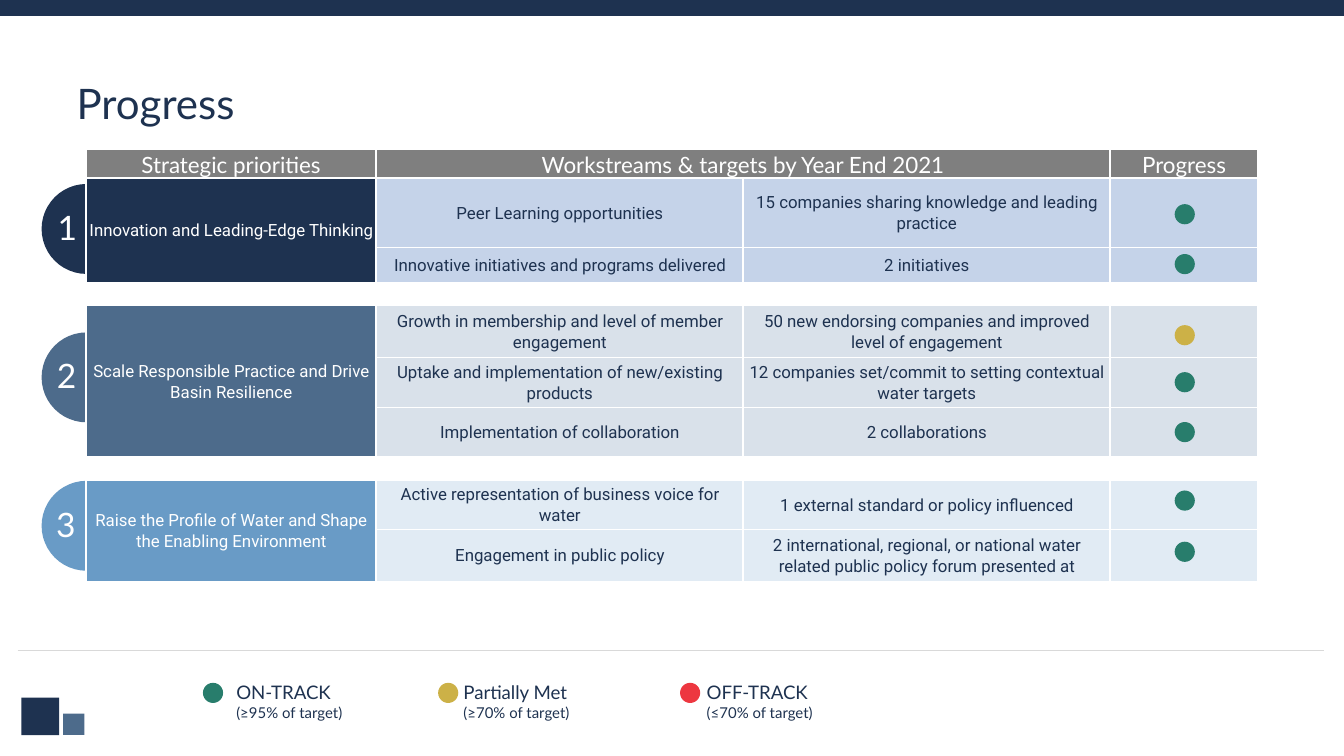
from dataclasses import dataclass

from lxml import etree
from pptx import Presentation
from pptx.dml.color import RGBColor
from pptx.enum import shapes, text
from pptx.oxml import ns
from pptx.util import Pt

NAVY, STEEL, SKY, WHITE, GRAY = "1E3250", "4D6B8B", "699BC6", "FFFFFF", "7F7F7F"
GREEN, GOLD, RED = "287D6C", "CCB147", "ED3740"
DOT = 10.8
TABLE_LEFT, TABLE_TOP = 46.1, 79.9
COLUMNS = [155.5, 196.6, 196.6, 79.2]
HEADER_HEIGHT, GAP_HEIGHT = 15.4, 12.3
BADGE_TOP, BADGE_STEP = 98.6, 79.5


@dataclass
class Target:
    workstream: str
    goal: str
    height: float
    dot_top: float
    status: str = GREEN


@dataclass
class Priority:
    name: str
    color: str
    tint: str
    targets: list[Target]


@dataclass
class Legend:
    label: str
    rule: str
    color: str
    dot_left: float
    text_left: float
    width: float


PRIORITIES = [
    Priority("Innovation and Leading-Edge Thinking", NAVY, "C5D3E9", [
        Target("Peer Learning opportunities",
               "15 companies sharing knowledge and leading practice", 37.4, 109.4),
        Target("Innovative initiatives and programs delivered", "2 initiatives", 18.7, 136.1),
    ]),
    Priority("Scale Responsible Practice and Drive Basin Resilience", STEEL, "D9E1EA", [
        Target("Growth in membership and level of member engagement",
               "50 new endorsing companies and improved level of engagement", 28, 174.2, GOLD),
        Target("Uptake and implementation of new/existing products",
               "12 companies set/commit to setting contextual water targets", 26.6, 199.4),
        Target("Implementation of collaboration", "2 collaborations", 26.6, 226.1),
    ]),
    Priority("Raise the Profile of Water and Shape the Enabling Environment", SKY, "E1EBF4", [
        Target("Active representation of business voice for water",
               "1 external standard or policy influenced", 26.6, 262.8),
        Target("Engagement in public policy",
               "2 international, regional, or national water related public policy forum presented at",
               28, 290.2),
    ]),
]

LEGENDS = [
    Legend("OFF-TRACK", "(≤70% of target)", RED, 364.3, 371.5, 85),
    Legend("Partially Met", "(≥70% of target)", GOLD, 234.7, 241.2, 91.4),
    Legend("ON-TRACK", "(≥95% of target)", GREEN, 108.7, 119.5, 84.2),
]


def rgb(value: str) -> RGBColor:
    return RGBColor.from_string(value)


def write(p, words: str, size: float, color: str, name: str = "Lato") -> None:
    r = p.add_run()
    r.text = words
    for key, value in {"size": Pt(size), "name": name}.items():
        setattr(r.font, key, value)
    r.font.color.rgb = rgb(color)


def add_filled(container, kind, box: tuple, color: str) -> None:
    sp = container.shapes.add_shape(kind, *map(Pt, box))
    sp.shadow.inherit = False
    sp.fill.solid()
    sp.fill.fore_color.rgb = rgb(color)
    sp.line.fill.background()


def add_dot(container, left: float, top: float, color: str) -> None:
    add_filled(container, shapes.MSO_SHAPE.FLOWCHART_CONNECTOR, (left, top, DOT, DOT), color)


def add_text(container, box: tuple, lines: list[tuple], wrap: bool = True) -> None:
    """Write one paragraph for each (words, size, color) line."""
    tf = container.shapes.add_textbox(*map(Pt, box)).text_frame
    tf.word_wrap = wrap
    for i, line in enumerate(lines):
        write(tf.add_paragraph() if i else tf.paragraphs[0], *line)


def add_badge(s, index: int, color: str) -> None:
    top = BADGE_TOP + index * BADGE_STEP
    g = s.shapes.add_group_shape()
    add_filled(g, shapes.MSO_SHAPE.OVAL, (22.3, top, 48.2, 48.2), color)
    left, width = 23.8 - 0.4 * index, 24.5 + 0.7 * index
    add_text(g, (left, top + 8.6, width, 28.8), [(str(index + 1), 18, WHITE)], wrap=False)


def add_legend(s, item: Legend) -> None:
    g = s.shapes.add_group_shape()
    add_text(g, (item.text_left, 361.4, item.width, 28.8),
             [(item.label, 10, NAVY), (item.rule, 8, NAVY)])
    add_dot(g, item.dot_left, 365.8, item.color)


def format_cell(cell, fill: str, sides: str = "LRTB") -> None:
    """Set white borders, fill and narrow margins, and keep an empty cell low."""
    tc_pr = cell._tc.get_or_add_tcPr()
    for side in sides:
        ln = etree.SubElement(tc_pr, ns.qn(f"a:ln{side}"), w=str(Pt(1)))
        solid = etree.SubElement(ln, ns.qn("a:solidFill"))
        etree.SubElement(solid, ns.qn("a:srgbClr"), val=WHITE)
    cell.fill.solid()
    cell.fill.fore_color.rgb = rgb(fill)
    layout = {"margin_left": Pt(1.4), "margin_right": Pt(1.4), "margin_top": 0,
              "margin_bottom": 0, "vertical_anchor": text.MSO_ANCHOR.MIDDLE}
    for key, value in layout.items():
        setattr(cell, key, value)
    etree.SubElement(cell.text_frame.paragraphs[0]._p, ns.qn("a:endParaRPr"), sz="600")


def write_cell(cell, words: str, size: float, color: str, name: str) -> None:
    p = cell.text_frame.paragraphs[0]
    for key, value in {"alignment": text.PP_ALIGN.CENTER, "line_spacing": 1.06}.items():
        setattr(p, key, value)
    write(p, words, size, color, name)


def add_progress_table(s) -> None:
    heights = [HEADER_HEIGHT]
    for i, priority in enumerate(PRIORITIES):
        heights += [GAP_HEIGHT] * (i > 0) + [t.height for t in priority.targets]
    box = (TABLE_LEFT, TABLE_TOP, sum(COLUMNS), sum(heights))
    table = s.shapes.add_table(len(heights), len(COLUMNS), *map(Pt, box)).table
    table.first_row = table.horz_banding = False
    for column, width in zip(table.columns, COLUMNS):
        column.width = Pt(width)
    for row, height in zip(table.rows, heights):
        row.height = Pt(height)

    def format_row(row: int, fills: list[str], first_sides: str = "LRTB") -> None:
        for col, fill in enumerate(fills):
            format_cell(table.cell(row, col), fill, "LRTB" if col else first_sides)

    format_row(0, [GRAY] * 4)
    table.cell(0, 1).merge(table.cell(0, 2))
    headers = {0: "Strategic priorities", 1: "Workstreams & targets by Year End 2021", 3: "Progress"}
    for col, words in headers.items():
        write_cell(table.cell(0, col), words, 12, WHITE, "Lato")

    row = 1
    for i, priority in enumerate(PRIORITIES):
        if i:
            format_row(row, [WHITE] * 4)
            table.cell(row, 0).merge(table.cell(row, 2))
            row += 1
        first = row
        for target in priority.targets:
            format_row(row, [priority.color] + [priority.tint] * 3, "RTB")
            for col, words in enumerate((target.workstream, target.goal), 1):
                write_cell(table.cell(row, col), words, 9, NAVY, "Roboto")
            row += 1
        table.cell(first, 0).merge(table.cell(row - 1, 0))
        write_cell(table.cell(first, 0), priority.name, 9, WHITE, "Roboto")


def add_title(s, words: str) -> None:
    sp = s.shapes.title
    box = {"left": Pt(33.8), "top": Pt(41), "width": Pt(651.6), "height": Pt(36)}
    for key, value in box.items():
        setattr(sp, key, value)
    tf = sp.text_frame
    tf.vertical_anchor = text.MSO_ANCHOR.TOP
    p = tf.paragraphs[0]
    for key, value in {"alignment": text.PP_ALIGN.LEFT, "line_spacing": 0.9}.items():
        setattr(p, key, value)
    write(p, words, 22.5, NAVY)


def add_rule(s) -> None:
    line = s.shapes.add_connector(shapes.MSO_CONNECTOR.STRAIGHT, *map(Pt, (9.4, 348.5, 709.2, 348.5)))
    line.line.color.rgb = rgb("D9D9D9")
    line.line.width = Pt(0.75)
    etree.SubElement(line._element.spPr, ns.qn("a:effectLst"))


def main() -> None:
    prs = Presentation()
    prs.slide_width, prs.slide_height = Pt(720), Pt(405)
    s = prs.slides.add_slide(prs.slide_layouts[5])
    add_title(s, "Progress")
    for box, color in [((11.5, 373.7, 20.2, 20.2), NAVY), ((33.8, 382.3, 11.5, 11.5), STEEL),
                       ((0, 0, 720, 8.6), NAVY)]:
        add_filled(s, shapes.MSO_SHAPE.RECTANGLE, box, color)
    for i, priority in enumerate(PRIORITIES):
        add_badge(s, i, priority.color)
    add_rule(s)
    for item in LEGENDS:
        add_legend(s, item)
    add_progress_table(s)
    dots = s.shapes.add_group_shape()
    for priority in PRIORITIES:
        for target in priority.targets:
            add_dot(dots, 629.3, target.dot_top, target.status)
    prs.save("out.pptx")


if __name__ == "__main__":
    main()
